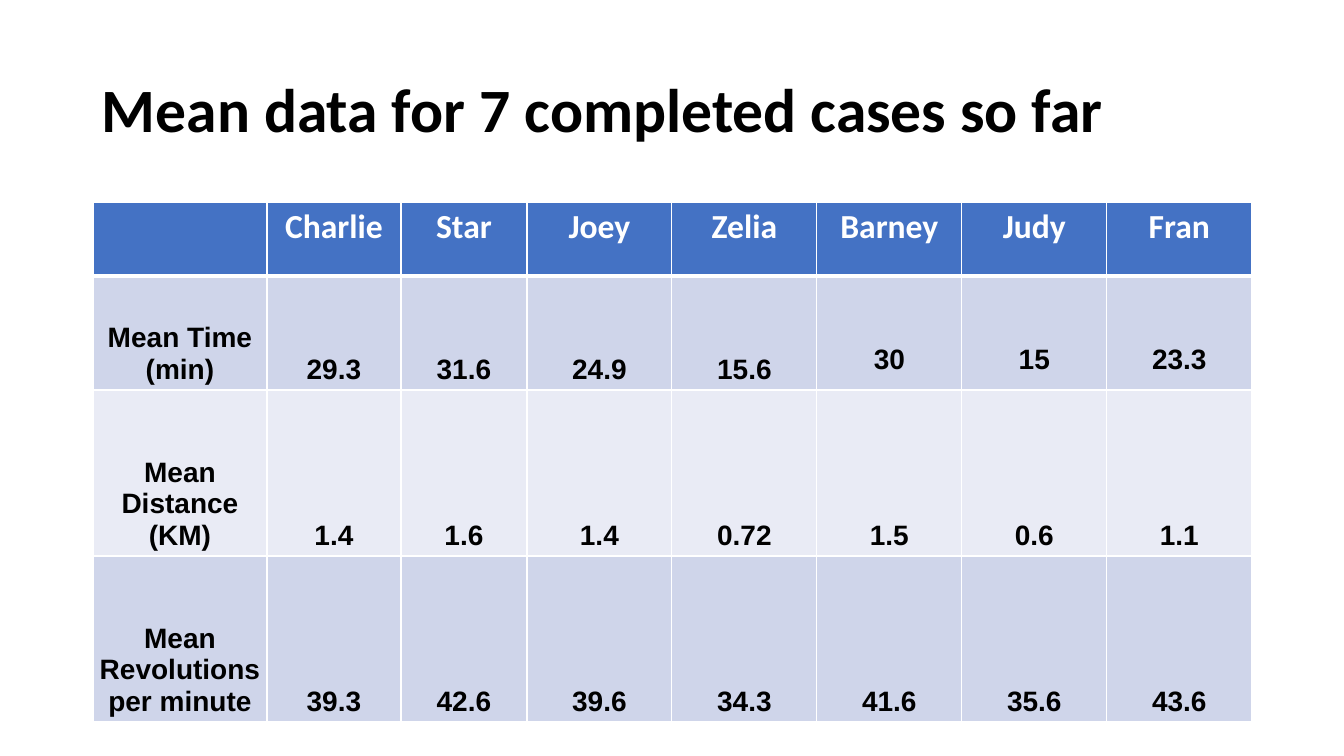
from lxml import etree
from pptx import Presentation
from pptx.dml.color import RGBColor
from pptx.enum.text import MSO_ANCHOR, PP_ALIGN
from pptx.oxml.ns import qn
from pptx.util import Pt

CENTER = PP_ALIGN.CENTER
TOP, MIDDLE, BOTTOM = MSO_ANCHOR.TOP, MSO_ANCHOR.MIDDLE, MSO_ANCHOR.BOTTOM

TITLE = "Mean data for 7 completed cases so far"
ROWS = [
    ["", "Charlie", "Star", "Joey", "Zelia", "Barney", "Judy", "Fran"],
    ["Mean Time (min)", "29.3", "31.6", "24.9", "15.6", "30", "15", "23.3"],
    ["Mean Distance (KM)", "1.4", "1.6", "1.4", "0.72", "1.5", "0.6", "1.1"],
    ["Mean Revolutions per minute", "39.3", "42.6", "39.6", "34.3", "41.6", "35.6", "43.6"],
]
COLUMN_WIDTHS = [174, 134, 126] + [145] * 5
ROW_HEIGHTS = [74, 114, 166, 166]
HEADER_FILL = "4472C4"
BAND_FILLS = ["CFD5EA", "E9EBF5"]
WHITE, BLACK = "FFFFFF", "000000"
FIRST_RAISED_COLUMN = 5  # the last three times sit higher than the others


def px(length):
    return round(length * 914400 / 100.8)


def color(hex_string):
    return RGBColor.from_string(hex_string)


def style(para, font_name, size, hex_string):
    font = para.font
    font.name, font.size, font.bold = font_name, Pt(size), True
    font.color.rgb = color(hex_string)


def set_borders(cell, widths):
    """Draw white cell edges; widths maps each edge tag to points."""
    properties = cell._tc.get_or_add_tcPr()
    for edge, width in widths.items():
        line = etree.SubElement(properties, qn(f"a:{edge}"), w=str(Pt(width)))
        fill = etree.SubElement(line, qn("a:solidFill"))
        etree.SubElement(fill, qn("a:srgbClr"), val=WHITE)


def add_title(slide):
    box = slide.shapes.add_textbox(px(92), px(40), px(1159), px(146))
    frame = box.text_frame
    frame.word_wrap = True
    frame.vertical_anchor = MIDDLE
    para = frame.paragraphs[0]
    para.text = TITLE
    para.line_spacing = 0.9
    style(para, "Calibri", 44, BLACK)


def fill_cell(cell, row, column):
    header = row == 0
    set_borders(cell, {"lnL": 1, "lnR": 1,
                       "lnT": 3 if row == 1 else 1,
                       "lnB": 3 if header else 1})
    cell.fill.solid()
    cell.fill.fore_color.rgb = color(HEADER_FILL if header else BAND_FILLS[(row - 1) % 2])
    para = cell.text_frame.paragraphs[0]
    para.text = ROWS[row][column]
    para.alignment = CENTER
    if header:
        cell.vertical_anchor = TOP
        style(para, "Calibri", 24, WHITE)
        return
    cell.vertical_anchor = BOTTOM
    cell.margin_left = cell.margin_right = cell.margin_top = px(1)
    raised = row == 1 and column >= FIRST_RAISED_COLUMN
    cell.margin_bottom = px(15 if raised else 5)
    style(para, "Arial", 20, BLACK)


def add_means_table(slide):
    frame = slide.shapes.add_table(len(ROWS), len(COLUMN_WIDTHS), px(93), px(202),
                                   px(sum(COLUMN_WIDTHS)), px(sum(ROW_HEIGHTS)))
    table = frame.table
    for column, width in enumerate(COLUMN_WIDTHS):
        table.columns[column].width = px(width)
    for row, height in enumerate(ROW_HEIGHTS):
        table.rows[row].height = px(height)
        for column in range(len(COLUMN_WIDTHS)):
            fill_cell(table.cell(row, column), row, column)


def main():
    deck = Presentation()
    deck.slide_width, deck.slide_height = px(1344), px(756)
    slide = deck.slides.add_slide(deck.slide_layouts[6])
    add_title(slide)
    add_means_table(slide)
    deck.save("out.pptx")


if __name__ == "__main__":
    main()
